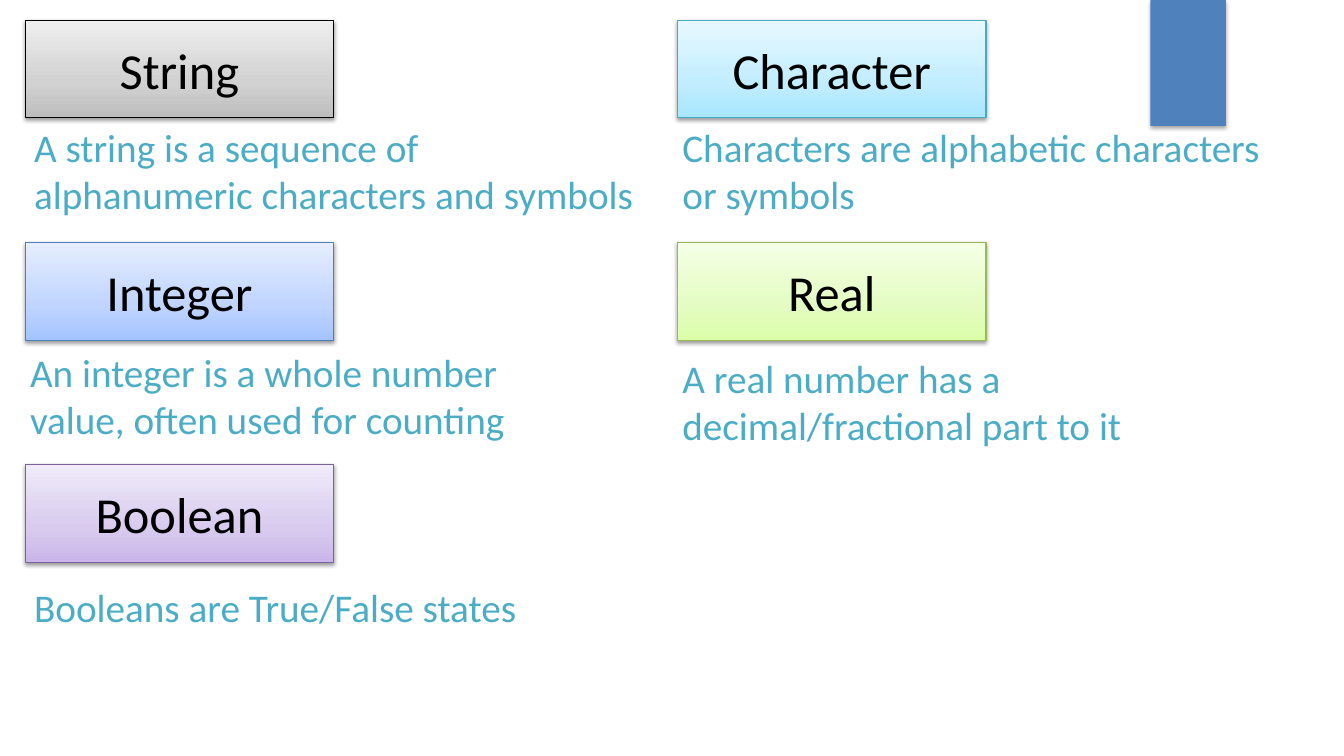
"""Build a slide that defines five basic data types."""
from dataclasses import dataclass

from lxml import etree
from pptx import Presentation
from pptx import util as u
from pptx.dml import color, fill
from pptx.enum import shapes, text
from pptx.oxml import ns


@dataclass(frozen=True)
class Theme:
    font: str = "Calibri"
    heading_size: int = 36
    body_size: int = 28
    heading_color: str = "000000"
    accent: str = "4F81BD"
    shadow: str = "000000"
    body_stops: tuple = ((0, "215968"), (50, "4BACC6"), (100, "93CDDD"))


@dataclass(frozen=True)
class DataType:
    name: str
    column: int
    row: int
    shades: tuple
    line: str
    definition: str
    left: float
    top: float
    height: float = 1.04


THEME = Theme()
STOPS = (0, 35, 100)
COLUMNS = (0.25, 6.72)
FIRST_ROW, ROW_STEP = 0.2, 2.205
DATA_TYPES = (
    DataType("String", 0, 0, ("BDBDBD", "D1D1D1", "EEEEEE"), "000000",
             "A string is a sequence of alphanumeric characters and symbols", 0.24, 1.17),
    DataType("Integer", 0, 1, ("A4C4FF", "BFD4FF", "E6EEFF"), "4B7EBC",
             "An integer is a whole number\nvalue, often used for counting", 0.2, 3.41),
    DataType("Real", 1, 1, ("DAFDA7", "E4FCC2", "F5FFE7"), "98B955",
             "A real number has a decimal/fractional part to it", 6.67, 3.47),
    DataType("Boolean", 0, 2, ("C9B5E8", "D8CBEE", "F0EAF9"), "7D60A0",
             "Booleans are True/False states", 0.24, 5.74, 0.57),
    DataType("Character", 1, 0, ("A7E6FF", "C1EDFF", "E7F8FF"), "46AAC5",
             "Characters are alphabetic characters or symbols", 6.67, 1.17),
)


def rgb(value: str) -> color.RGBColor:
    """Turn a hex string into a colour."""
    return color.RGBColor.from_string(value)


def set_gradient(target: fill.FillFormat, element, stops: tuple, angle: int) -> None:
    """Fill with the given stops at a counter-clockwise angle."""
    target.gradient()
    target.gradient_angle = angle
    stop_list = next(element.iter(ns.qn("a:gsLst")))
    for old in list(stop_list):
        stop_list.remove(old)
    for position, value in stops:
        gs = etree.SubElement(stop_list, ns.qn("a:gs"), pos=str(position * 1000))
        etree.SubElement(gs, ns.qn("a:srgbClr"), val=value)


def add_box(s, left: float, top: float, width: float, height: float,
            opacity: int, distance: float):
    """Add a rectangle with a soft shadow below it."""
    sp = s.shapes.add_shape(shapes.MSO_SHAPE.RECTANGLE, u.Inches(left), u.Inches(top),
                            u.Inches(width), u.Inches(height))
    sp.shadow.inherit = False
    effects = sp._element.spPr.find(ns.qn("a:effectLst"))
    shadow = etree.SubElement(effects, ns.qn("a:outerShdw"), blurRad=str(u.Pt(3.1)),
                              dist=str(u.Pt(distance)), dir="5400000", rotWithShape="0")
    tint = etree.SubElement(shadow, ns.qn("a:srgbClr"), val=THEME.shadow)
    etree.SubElement(tint, ns.qn("a:alpha"), val=str(opacity * 1000))
    return sp


def add_accent(s) -> None:
    """Add the plain bar at the top right."""
    sp = add_box(s, 11.41, 0, 0.75, 1.25, 35, 1.8)
    sp.fill.solid()
    sp.fill.fore_color.rgb = rgb(THEME.accent)
    sp.line.fill.background()


def add_heading(s, item: DataType) -> None:
    """Add the coloured box that names a data type."""
    sp = add_box(s, COLUMNS[item.column], FIRST_ROW + item.row * ROW_STEP, 3.06, 0.97, 38, 1.6)
    set_gradient(sp.fill, sp._element, tuple(zip(STOPS, item.shades)), 90)
    sp.line.color.rgb = rgb(item.line)
    sp.line.width = u.Pt(0.75)
    tf = sp.text_frame
    tf.text = item.name
    tf.vertical_anchor = text.MSO_ANCHOR.MIDDLE
    p = tf.paragraphs[0]
    p.alignment = text.PP_ALIGN.CENTER
    r = p.runs[0]
    r.font.name = THEME.font
    r.font.size = u.Pt(THEME.heading_size)
    r.font.color.rgb = rgb(THEME.heading_color)


def add_definition(s, item: DataType) -> None:
    """Add the sentence that explains a data type."""
    sp = s.shapes.add_textbox(u.Inches(item.left), u.Inches(item.top),
                              u.Inches(6.23), u.Inches(item.height))
    tf = sp.text_frame
    tf.word_wrap = True
    tf.auto_size = text.MSO_AUTO_SIZE.SHAPE_TO_FIT_TEXT
    p = tf.paragraphs[0]
    p.text = item.definition
    for r in p.runs:
        r.font.name = THEME.font
        r.font.size = u.Pt(THEME.body_size)
        set_gradient(r.font.fill, r._r, THEME.body_stops, 270)


def main() -> None:
    """Build and save the slide."""
    prs = Presentation()
    prs.slide_width, prs.slide_height = u.Inches(13.33), u.Inches(7.5)
    s = prs.slides.add_slide(prs.slide_layouts[6])
    add_accent(s)
    for item in DATA_TYPES:
        add_heading(s, item)
    for item in DATA_TYPES:
        add_definition(s, item)
    prs.save("out.pptx")


if __name__ == "__main__":
    main()
